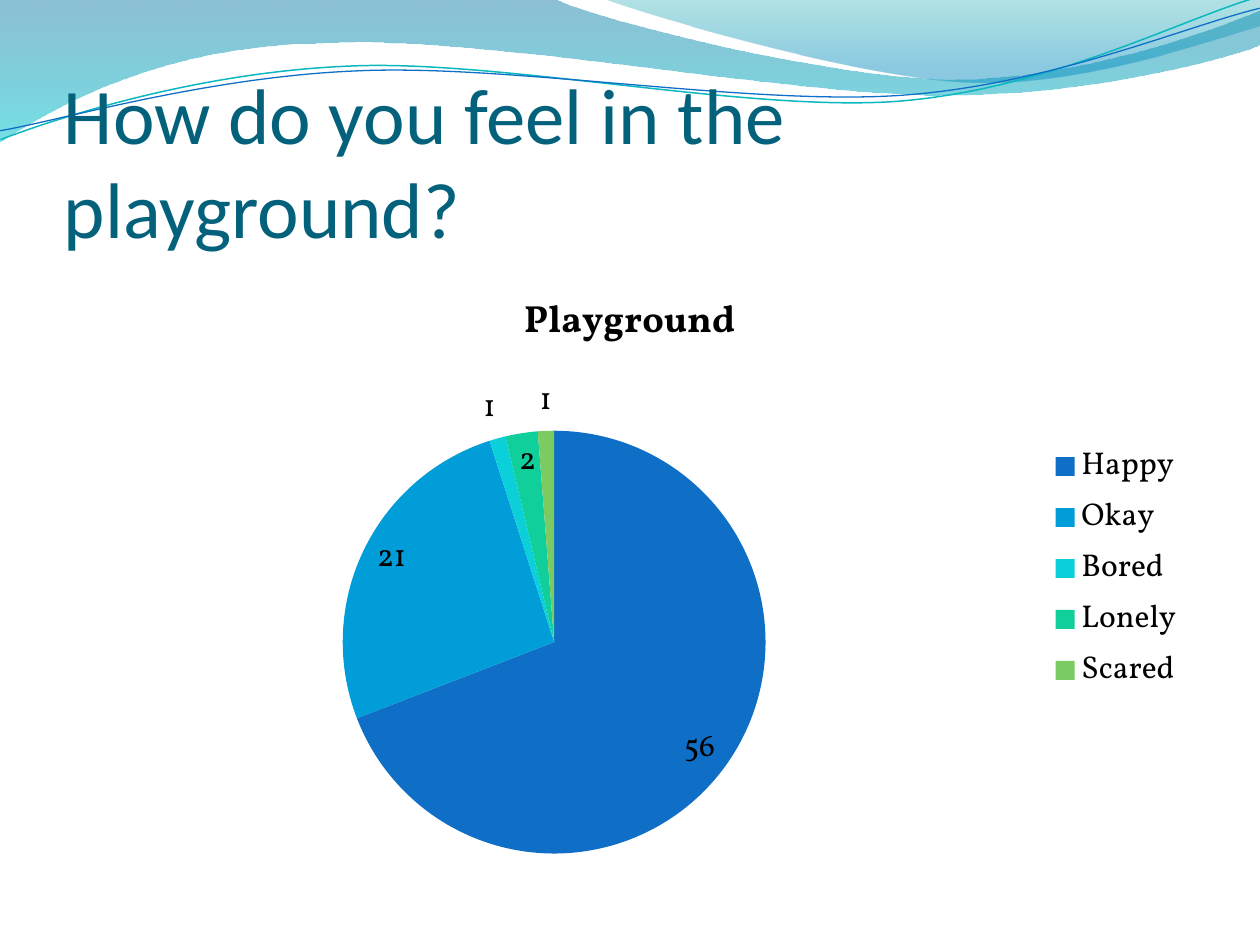
from dataclasses import dataclass

from lxml.etree import SubElement
from pptx import Presentation
from pptx.chart.data import CategoryChartData as ChartData
from pptx.dml.color import RGBColor as Rgb
from pptx.enum.chart import XL_CHART_TYPE as Kind
from pptx.enum.chart import XL_LABEL_POSITION as Spot
from pptx.enum.chart import XL_LEGEND_POSITION as Side
from pptx.enum.text import MSO_ANCHOR as Anchor
from pptx.oxml.ns import qn
from pptx.util import Pt


@dataclass(frozen=True)
class Theme:
    head_font: str = "Calibri"
    body_font: str = "Vollkorn"
    head_size: float = 45
    body_size: float = 18
    chart_size: float = 21.6
    head: str = "04617B"
    ink: str = "000000"
    teal: str = "0AB8BF"
    blue: str = "0F6FC6"
    wide: tuple = ((0, "0074A1", 45), (1, "00C6CF", 55))
    short: tuple = ((0, "00A1A9", 30), (0.8, "008BBF", 45))
    slices: tuple = ("0F6FC6", "009DD9", "0BD0D9", "10CF9B", "7CCA62")


THEME = Theme()
TILT = 357.3

WIDE_WAVE = [
    (0, 0), (554, -1),
    (600, 21, 837, 79, 955, 79), (1075, 79, 1207, 33, 1260, 11),
    (1261, 45),
    (1238, 55, 1096, 96, 940, 95), (784, 95, 481, 35, 324, 43),
    (163, 45, 58, 105, -1, 142), (0, 0),
]
SHORT_WAVE = [
    (604, -1),
    (641, 14, 859, 78, 969, 82), (1079, 87, 1211, 40, 1260, 26),
    (1260, 0), (604, -1),
]
TEAL_LINE = [
    (-2, 110),
    (59, 90, 199, 52, 350, 53), (499, 53, 745, 118, 896, 114),
    (1049, 109, 1184, 45, 1260, 27),
]
BLUE_LINE = [
    (-2, 101),
    (57, 94, 207, 57, 357, 58), (509, 58, 750, 112, 902, 108),
    (1052, 104, 1188, 52, 1262, 38),
]
VOTES = {"Happy": 56, "Okay": 21, "Bored": 1, "Lonely": 2, "Scared": 1}


def px(n):
    return round(n * 914400 / 126)


def bend(shape, path):
    lines = list(shape.element.spPr.iter(qn("a:lnTo")))
    for line, part in zip(lines, path[1:]):
        if len(part) == 2:
            continue
        curve = line.makeelement(qn("a:cubicBezTo"))
        for x, y in zip(part[::2], part[1::2]):
            point = SubElement(curve, qn("a:pt"))
            point.set("x", str(px(x) - shape.left))
            point.set("y", str(px(y) - shape.top))
        line.getparent().replace(line, curve)


def add_path(slide, path, close):
    start, *rest = [(px(part[-2]), px(part[-1])) for part in path]
    pen = slide.shapes.build_freeform(*start, scale=1.0)
    pen.add_line_segments(rest, close=close)
    shape = pen.convert_to_shape()
    shape.shadow.inherit = False
    bend(shape, path)
    return shape


def add_wave(slide, path, stops):
    shape = add_path(slide, path, True)
    shape.line.fill.background()
    shape.fill.gradient()
    shape.fill.gradient_angle = 270
    for stop, (place, tint, _) in zip(shape.fill.gradient_stops, stops):
        stop.position = place
        stop.color.rgb = Rgb.from_string(tint)
    tints = shape.element.spPr.iter(qn("a:srgbClr"))
    for node, (_, _, alpha) in zip(tints, stops):
        SubElement(node, qn("a:alpha")).set("val", str(alpha * 1000))


def add_curve(slide, path, tint, width):
    shape = add_path(slide, path, False)
    shape.rotation = TILT
    shape.fill.background()
    shape.line.color.rgb = Rgb.from_string(tint)
    shape.line.width = Pt(width)


def style(font, name, size, tint):
    font.name = name
    font.size = Pt(size)
    font.color.rgb = Rgb.from_string(tint)


def add_head(slide, text):
    frame = slide.shapes.add_textbox(px(63), px(97), px(1134), px(160)).text_frame
    frame.word_wrap = True
    frame.vertical_anchor = Anchor.BOTTOM
    frame.margin_bottom = 0
    frame.margin_left = px(1)
    frame.margin_top = px(6)
    frame.margin_right = px(40)
    frame.text = text
    para = frame.paragraphs[0]
    para.line_spacing = 0.99
    style(para.runs[0].font, THEME.head_font, THEME.head_size, THEME.head)


def add_pie(slide, name, votes):
    data = ChartData()
    data.categories = list(votes)
    data.add_series(name, list(votes.values()))
    chart = slide.shapes.add_chart(
        Kind.PIE, px(63), px(266), px(1134), px(605), data).chart
    style(chart.font, THEME.body_font, THEME.body_size, THEME.ink)

    chart.has_title = True
    frame = chart.chart_title.text_frame
    frame.text = name
    font = frame.paragraphs[0].runs[0].font
    style(font, THEME.body_font, THEME.chart_size, THEME.ink)
    font.bold = True
    chart.chart_title.include_in_layout = False

    chart.has_legend = True
    chart.legend.position = Side.RIGHT
    chart.legend.include_in_layout = False

    plot = chart.plots[0]
    plot.vary_by_categories = True
    plot.has_data_labels = True
    plot.data_labels.show_value = True
    plot.data_labels.show_percentage = False
    plot.data_labels.position = Spot.BEST_FIT
    for i, tint in enumerate(THEME.slices):
        fill = plot.series[0].points[i].format.fill
        fill.solid()
        fill.fore_color.rgb = Rgb.from_string(tint)


def main():
    deck = Presentation()
    deck.slide_width, deck.slide_height = px(1260), px(945)
    slide = deck.slides.add_slide(deck.slide_layouts[6])
    add_wave(slide, WIDE_WAVE, THEME.wide)
    add_wave(slide, SHORT_WAVE, THEME.short)
    add_curve(slide, TEAL_LINE, THEME.teal, 0.85)
    add_curve(slide, BLUE_LINE, THEME.blue, 0.75)
    add_head(slide, "How do you feel in the playground?")
    add_pie(slide, "Playground", VOTES)
    deck.save("out.pptx")


if __name__ == "__main__":
    main()
